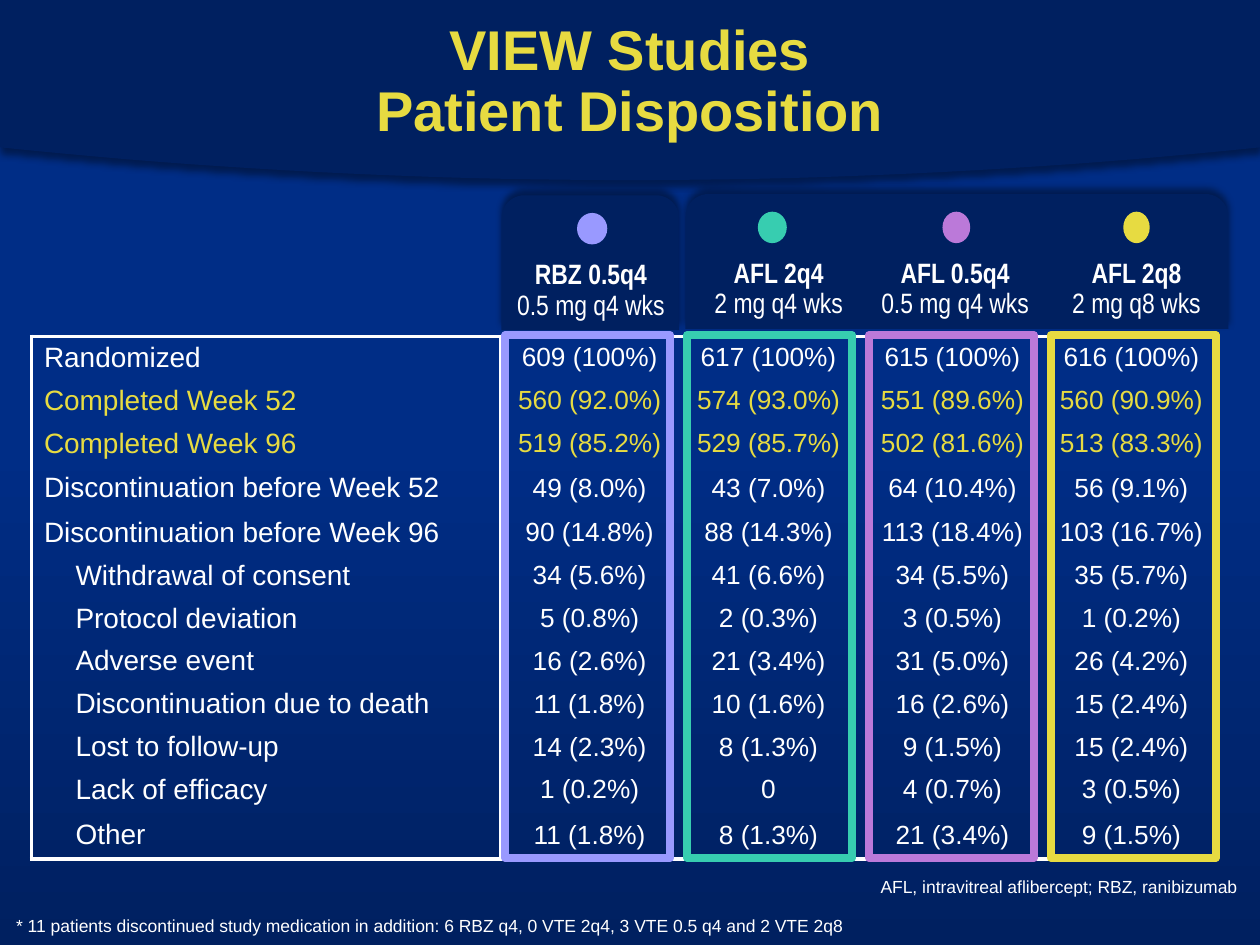
from dataclasses import dataclass

from pptx import Presentation
from pptx.dml.color import RGBColor
from pptx.enum.shapes import MSO_SHAPE
from pptx.enum.text import MSO_ANCHOR, MSO_AUTO_SIZE, PP_ALIGN
from pptx.oxml import parse_xml
from pptx.oxml.ns import nsdecls
from pptx.util import Inches, Pt

COLORS = {
    "navy": "002060", "blue": "002D86", "white": "FFFFFF", "black": "000000",
    "yellow": "E7DB41", "violet": "9999FF", "teal": "37CDB0", "orchid": "BB79D9",
}


@dataclass
class Arm:
    name: str
    dose: str
    color: str
    label_center: float
    dot_center: float
    dot_width: float
    drop: float = 0.0


@dataclass
class Row:
    label: str
    values: tuple
    color: str = "white"
    indent: float = 0.0
    height: float = 0.34


ARMS = [
    Arm("RBZ 0.5q4", "0.5 mg q4 wks", "violet", 4.69, 4.7, 0.24, drop=0.01),
    Arm("AFL 2q4", "2 mg q4 wks", "teal", 6.18, 6.13, 0.23),
    Arm("AFL 0.5q4", "0.5 mg q4 wks", "orchid", 7.58, 7.59, 0.22),
    Arm("AFL 2q8", "2 mg q8 wks", "yellow", 9.02, 9.02, 0.21),
]
SUB = 0.25
ROWS = [
    Row("Randomized", ("609 (100%)", "617 (100%)", "615 (100%)", "616 (100%)")),
    Row("Completed Week 52",
        ("560 (92.0%)", "574 (93.0%)", "551 (89.6%)", "560 (90.9%)"), "yellow"),
    Row("Completed Week 96",
        ("519 (85.2%)", "529 (85.7%)", "502 (81.6%)", "513 (83.3%)"), "yellow"),
    Row("Discontinuation before Week 52",
        ("49 (8.0%)", "43 (7.0%)", "64 (10.4%)", "56 (9.1%)"), height=0.37),
    Row("Discontinuation before Week 96",
        ("90 (14.8%)", "88 (14.3%)", "113 (18.4%)", "103 (16.7%)")),
    Row("Withdrawal of consent",
        ("34 (5.6%)", "41 (6.6%)", "34 (5.5%)", "35 (5.7%)"), indent=SUB),
    Row("Protocol deviation",
        ("5 (0.8%)", "2 (0.3%)", "3 (0.5%)", "1 (0.2%)"), indent=SUB),
    Row("Adverse event",
        ("16 (2.6%)", "21 (3.4%)", "31 (5.0%)", "26 (4.2%)"), indent=SUB),
    Row("Discontinuation due to death",
        ("11 (1.8%)", "10 (1.6%)", "16 (2.6%)", "15 (2.4%)"), indent=SUB),
    Row("Lost to follow-up",
        ("14 (2.3%)", "8 (1.3%)", "9 (1.5%)", "15 (2.4%)"), indent=SUB),
    Row("Lack of efficacy",
        ("1 (0.2%)", "0", "4 (0.7%)", "3 (0.5%)"), indent=SUB),
    Row("Other",
        ("11 (1.8%)", "8 (1.3%)", "21 (3.4%)", "9 (1.5%)"), indent=SUB, height=0.38),
]
COLUMN_WIDTHS = (3.72, 1.42, 1.42, 1.5, 1.34)


def rgb(name: str) -> RGBColor:
    return RGBColor.from_string(COLORS[name])


def write_text(frame, text: str, *, size: float, color: str = "white",
               font: str = "Arial", bold_lines: int = 0, align=PP_ALIGN.LEFT,
               spacing: float = 1.0):
    """Write one paragraph; the first bold_lines of its lines are bold."""
    para = frame.paragraphs[0]
    para.alignment, para.line_spacing, para.space_before = align, spacing, Pt(0)
    for number, line in enumerate(text.split("\n")):
        if number:
            para.add_line_break()
        span = para.add_run()
        span.text = line
        span.font.size, span.font.name = Pt(size), font
        span.font.bold = number < bold_lines
        span.font.color.rgb = rgb(color)
    return para


def add_text(page, text: str, at: tuple, *, wrap: bool = False, **style) -> None:
    box = page.shapes.add_textbox(*map(Inches, at))
    box.text_frame.word_wrap = wrap
    write_text(box.text_frame, text, **style)


def add_shadow(shape, distance: float, angle: int, blur: float) -> None:
    shape._element.spPr.append(parse_xml(
        f'<a:effectLst {nsdecls("a")}><a:outerShdw blurRad="{Pt(blur)}" '
        f'dist="{Pt(distance)}" dir="{angle * 60000}" algn="t" rotWithShape="0">'
        f'<a:srgbClr val="{COLORS["black"]}"><a:alpha val="40000"/></a:srgbClr>'
        f'</a:outerShdw></a:effectLst>'))


def fill_plain(shape, color: str) -> None:
    shape.fill.solid()
    shape.fill.fore_color.rgb = rgb(color)
    shape.line.fill.background()


def add_plain(page, kind, at: tuple, color: str):
    shape = page.shapes.add_shape(kind, *map(Inches, at))
    shape.shadow.inherit = False
    fill_plain(shape, color)
    return shape


def add_tab(page, at: tuple) -> None:
    tab = add_plain(page, MSO_SHAPE.ROUND_2_SAME_RECTANGLE, at, "navy")
    tab.adjustments[0] = 0.17
    tab._element.spPr.remove(tab._element.spPr[-1])
    add_shadow(tab, 3, 270, 4)


def add_frame(page, at: tuple, color: str) -> None:
    frame = page.shapes.add_shape(MSO_SHAPE.RECTANGLE, *map(Inches, at))
    frame.shadow.inherit = False
    frame.fill.background()
    frame.line.color.rgb = rgb(color)
    frame.line.width = Pt(4.5)


def set_background(page) -> None:
    stops = "".join(
        f'<a:gs pos="{place * 1000}"><a:srgbClr val="{COLORS[color]}"/></a:gs>'
        for place, color in ((0, "navy"), (53, "blue"), (100, "blue")))
    page._element.cSld.insert(0, parse_xml(
        f'<p:bg {nsdecls("p", "a")}><p:bgPr><a:gradFill rotWithShape="1">'
        f'<a:gsLst>{stops}</a:gsLst><a:lin ang="16200000" scaled="0"/>'
        f'</a:gradFill><a:effectLst/></p:bgPr></p:bg>'))


def add_banner(page) -> None:
    """Header area whose lower edge is a parabola, 1.43 deep at the middle."""
    steps = 40
    edge = [(10 * i / steps, 1.43 - 0.26 * (2 * i / steps - 1) ** 2)
            for i in range(steps + 1)]
    builder = page.shapes.build_freeform(0, 0, scale=Inches(1) / 1000)
    points = [(round(x * 1000), round(y * 1000)) for x, y in edge]
    builder.add_line_segments(points + [(10000, 0)], close=True)
    banner = builder.convert_to_shape()
    fill_plain(banner, "navy")
    add_shadow(banner, 3, 90, 4)


def set_borders(cell, widths: dict) -> None:
    """Draw the given sides in white and leave the others without a line."""
    properties = cell._tc.get_or_add_tcPr()
    for place, side in enumerate("LRTB"):
        width = widths.get(side, 0)
        paint = (f'<a:solidFill><a:srgbClr val="{COLORS["white"]}"/></a:solidFill>'
                 if width else "<a:noFill/>")
        properties.insert(place, parse_xml(
            f'<a:ln{side} {nsdecls("a")} w="{Pt(width)}">{paint}</a:ln{side}>'))


def add_disposition_table(page) -> None:
    table = page.shapes.add_table(
        len(ROWS), len(COLUMN_WIDTHS), Inches(0.25), Inches(2.67),
        Inches(sum(COLUMN_WIDTHS)), Inches(sum(row.height for row in ROWS))).table
    table.first_row = table.horz_banding = False
    for column, width in zip(table.columns, COLUMN_WIDTHS):
        column.width = Inches(width)
    last_row, last_column = len(ROWS) - 1, len(COLUMN_WIDTHS) - 1
    for r, row in enumerate(ROWS):
        table.rows[r].height = Inches(row.height)
        for c, text in enumerate((row.label, *row.values)):
            cell = table.cell(r, c)
            cell.vertical_anchor = MSO_ANCHOR.MIDDLE
            cell.margin_top = cell.margin_bottom = 0
            cell.margin_left = cell.margin_right = Inches(0.08 if c else 0.1)
            cell.fill.background()
            para = write_text(cell.text_frame, text, size=15 if c else 16,
                              color=row.color,
                              align=PP_ALIGN.CENTER if c else PP_ALIGN.LEFT)
            if c == 0:
                para._p.get_or_add_pPr().set("marL", str(Inches(row.indent)))
            sides = {"L": {0: 2.25, 1: 1}.get(c, 0),
                     "R": {0: 1, last_column: 2.25}.get(c, 0),
                     "T": 2.25 if r == 0 else 0,
                     "B": 2.25 if r == last_row else 0}
            set_borders(cell, sides)


def main() -> None:
    deck = Presentation()
    deck.slide_width, deck.slide_height = Inches(10), Inches(7.5)
    page = deck.slides.add_slide(deck.slide_layouts[5])
    set_background(page)
    add_banner(page)

    # Title, brought in front of the banner
    title = page.shapes.title
    title.left, title.top, title.width, title.height = map(Inches, (0.5, 0.29, 9, 0.9))
    title.text_frame.auto_size = MSO_AUTO_SIZE.NONE
    title.text_frame.vertical_anchor = MSO_ANCHOR.BOTTOM
    write_text(title.text_frame, "VIEW Studies\nPatient Disposition", size=32,
               color="yellow", bold_lines=2, align=PP_ALIGN.CENTER, spacing=0.9)
    page.shapes._spTree.append(title._element)

    add_disposition_table(page)

    # Column heads and coloured frames
    add_tab(page, (3.98, 1.55, 1.41, 1.07))
    add_tab(page, (5.44, 1.54, 4.31, 1.07))
    for number, arm in enumerate(ARMS):
        add_plain(page, MSO_SHAPE.OVAL, (arm.dot_center - arm.dot_width / 2,
                  1.68 + arm.drop, arm.dot_width, 0.25), arm.color)
        add_text(page, f"{arm.name}\n{arm.dose}",
                 (arm.label_center - 0.69, 2.01 + arm.drop, 1.38, 0.58), size=16,
                 font="Arial Narrow", bold_lines=1, align=PP_ALIGN.CENTER, spacing=0.9)
        add_frame(page, (4.01 + 1.443 * number, 2.66, 1.31, 4.15), arm.color)

    # Footnotes
    add_text(page, "AFL, intravitreal aflibercept; RBZ, ranibizumab",
             (6.89, 6.9, 3.06, 0.27), size=10)
    add_text(page, "* 11 patients discontinued study medication in addition: "
             "6 RBZ q4, 0 VTE 2q4, 3 VTE 0.5 q4 and 2 VTE 2q8",
             (0.03, 7.21, 9.3, 0.27), wrap=True, size=10)
    deck.save("out.pptx")


if __name__ == "__main__":
    main()
